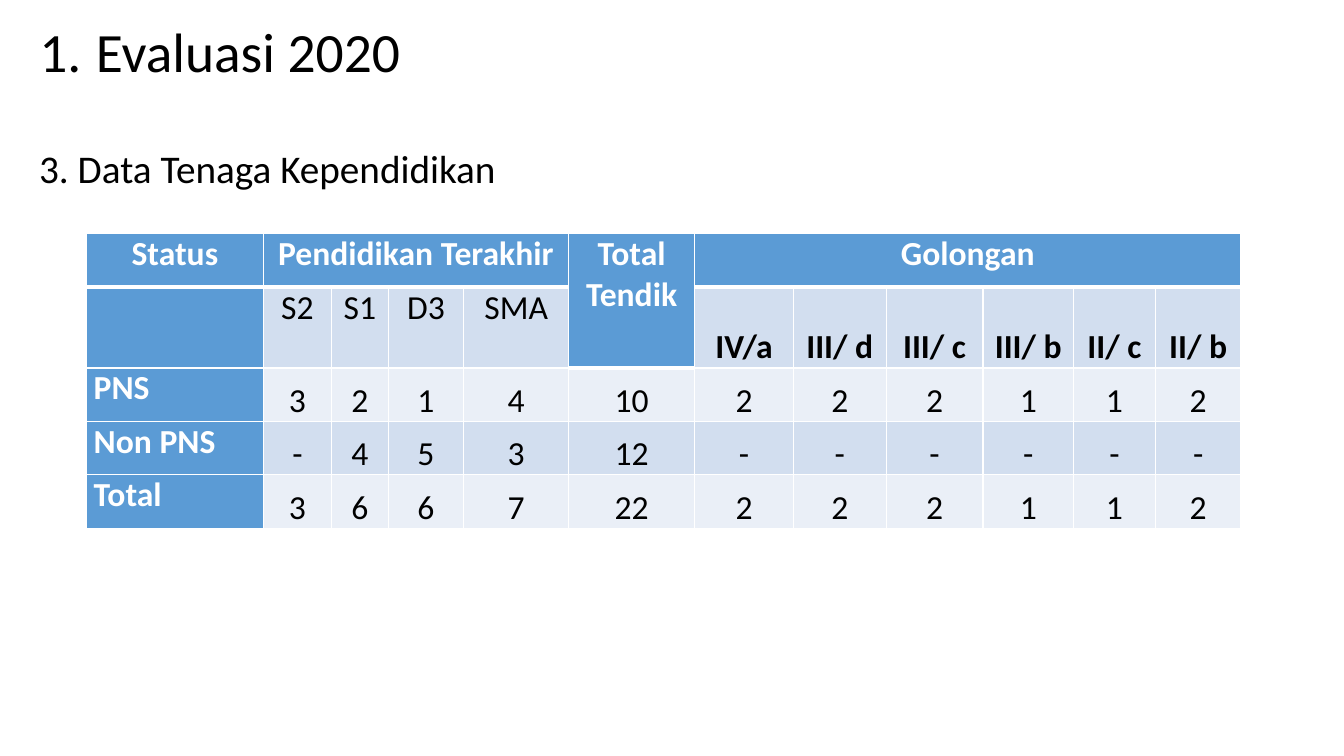
import dataclasses

import pptx
import pptx.dml.color
import pptx.enum.text
import pptx.oxml
import pptx.oxml.ns
import pptx.table
import pptx.text.text
import pptx.util

Inches = pptx.util.Inches
Pt = pptx.util.Pt
Align = pptx.enum.text.PP_ALIGN
Anchor = pptx.enum.text.MSO_ANCHOR

FONT = "Calibri"
WHITE, BLACK = "FFFFFF", "000000"
HEADER_BLUE, DARK_BAND, LIGHT_BAND = "5B9BD5", "D2DEEF", "EAEFF7"
TOTAL_COLUMN, GRADE_COLUMN = 5, 6

COLUMN_WIDTHS = [1.75, 0.68, 0.56, 0.75, 1.04, 1.25, 0.98, 0.92, 0.96, 0.9, 0.81, 0.85]
ROW_HEIGHTS = [0.53, 0.8, 0.53, 0.53, 0.53]
ROWS = [
    ["Status", "Pendidikan Terakhir", "", "", "", "Total Tendik", "Golongan", "", "", "", "", ""],
    ["", "S2", "S1", "D3", "SMA", "", "IV/a", "III/ d", "III/ c", "III/ b", "II/ c", "II/ b"],
    ["PNS", "3", "2", "1", "4", "10", "2", "2", "2", "1", "1", "2"],
    ["Non PNS", "-", "4", "5", "3", "12", "-", "-", "-", "-", "-", "-"],
    ["Total", "3", "6", "6", "7", "22", "2", "2", "2", "1", "1", "2"],
]
HEADER_SPANS = [((0, 1), (0, 4)), ((0, 5), (1, 5)), ((0, 6), (0, 11))]


@dataclasses.dataclass
class CellStyle:
    fill: str
    color: str
    bold: bool
    align: Align
    anchor: Anchor
    side_margin: float
    top_margin: float


def rgb(value: str) -> pptx.dml.color.RGBColor:
    return pptx.dml.color.RGBColor.from_string(value)


def add_run(paragraph: pptx.text.text._Paragraph, text: str, size: float,
            color: str, bold: bool = False) -> None:
    run = paragraph.add_run()
    run.text = text
    run.font.name = FONT
    run.font.size = Pt(size)
    run.font.bold = bold
    run.font.color.rgb = rgb(color)


def cell_style(row: int, column: int) -> CellStyle:
    is_header = row == 0 or column == 0 or (row == 1 and column == TOTAL_COLUMN)
    is_grade = row == 1 and column >= GRADE_COLUMN
    is_label = is_header or (row == 1 and not is_grade)
    band = DARK_BAND if row % 2 else LIGHT_BAND
    return CellStyle(
        fill=HEADER_BLUE if is_header else band,
        color=WHITE if is_header else BLACK,
        bold=is_header or is_grade,
        align=Align.LEFT if column == 0 and row > 0 else Align.CENTER,
        anchor=Anchor.TOP if is_label else Anchor.BOTTOM,
        side_margin=0.07 if is_label else 0.01,
        top_margin=0 if is_label else 0.01,
    )


def set_borders(cell: pptx.table._Cell, top: float, bottom: float) -> None:
    properties = cell._tc.get_or_add_tcPr()
    widths = {"lnL": 1, "lnR": 1, "lnT": top, "lnB": bottom}
    for position, (side, width) in enumerate(widths.items()):
        properties.insert(position, pptx.oxml.parse_xml(
            f'<a:{side} {pptx.oxml.ns.nsdecls("a")} w="{Pt(width)}"><a:solidFill>'
            f'<a:srgbClr val="{WHITE}"/></a:solidFill></a:{side}>'))


def fill_cell(cell: pptx.table._Cell, text: str, style: CellStyle) -> None:
    cell.fill.solid()
    cell.fill.fore_color.rgb = rgb(style.fill)
    cell.vertical_anchor = style.anchor
    cell.margin_left = cell.margin_right = Inches(style.side_margin)
    cell.margin_top = Inches(style.top_margin)
    cell.margin_bottom = 0
    paragraph = cell.text_frame.paragraphs[0]
    paragraph.alignment = style.align
    if text:
        add_run(paragraph, text, 24, style.color, style.bold)


def main() -> None:
    presentation = pptx.Presentation()
    presentation.slide_width = Inches(13.33)
    presentation.slide_height = Inches(7.5)
    slide = presentation.slides.add_slide(presentation.slide_layouts[5])

    # Numbered title
    title = slide.shapes.title
    title.left, title.top = Inches(0.29), Inches(0.2)
    title.width, title.height = Inches(12.65), Inches(0.68)
    title.text_frame.auto_size = pptx.enum.text.MSO_AUTO_SIZE.NONE
    title.text_frame.vertical_anchor = Anchor.MIDDLE
    heading = title.text_frame.paragraphs[0]
    heading.alignment = Align.LEFT
    heading.line_spacing = 0.9
    numbering = heading._p.get_or_add_pPr()
    numbering.set("marL", str(Inches(0.56)))
    numbering.set("indent", str(-Inches(0.56)))
    numbering.append(pptx.oxml.parse_xml(
        f'<a:buAutoNum {pptx.oxml.ns.nsdecls("a")} type="arabicPeriod"/>'))
    add_run(heading, "Evaluasi 2020", 39.6, BLACK)

    # Section heading
    section = slide.shapes.add_textbox(Inches(0.29), Inches(0.89), Inches(12.65), Inches(6.45))
    section.text_frame.word_wrap = True
    section.text_frame.margin_top = Inches(0.54)
    add_run(section.text_frame.paragraphs[0], "3. Data Tenaga Kependidikan", 28, BLACK)

    # Staff table
    staff = slide.shapes.add_table(
        len(ROWS), len(COLUMN_WIDTHS), Inches(0.86), Inches(2.32),
        Inches(sum(COLUMN_WIDTHS)), Inches(sum(ROW_HEIGHTS))).table
    staff.first_row = staff.horz_banding = False
    for column, width in zip(staff.columns, COLUMN_WIDTHS):
        column.width = Inches(width)
    for row, height in zip(staff.rows, ROW_HEIGHTS):
        row.height = Inches(height)
    for start, end in HEADER_SPANS:
        staff.cell(*start).merge(staff.cell(*end))
    for row, texts in enumerate(ROWS):
        for column, text in enumerate(texts):
            cell = staff.cell(row, column)
            fill_cell(cell, text, cell_style(row, column))
            header_end = 1 if column == TOTAL_COLUMN else 0
            set_borders(cell, top=3 if row == header_end + 1 else 1,
                        bottom=3 if row <= header_end else 1)

    presentation.save("out.pptx")


if __name__ == "__main__":
    main()
